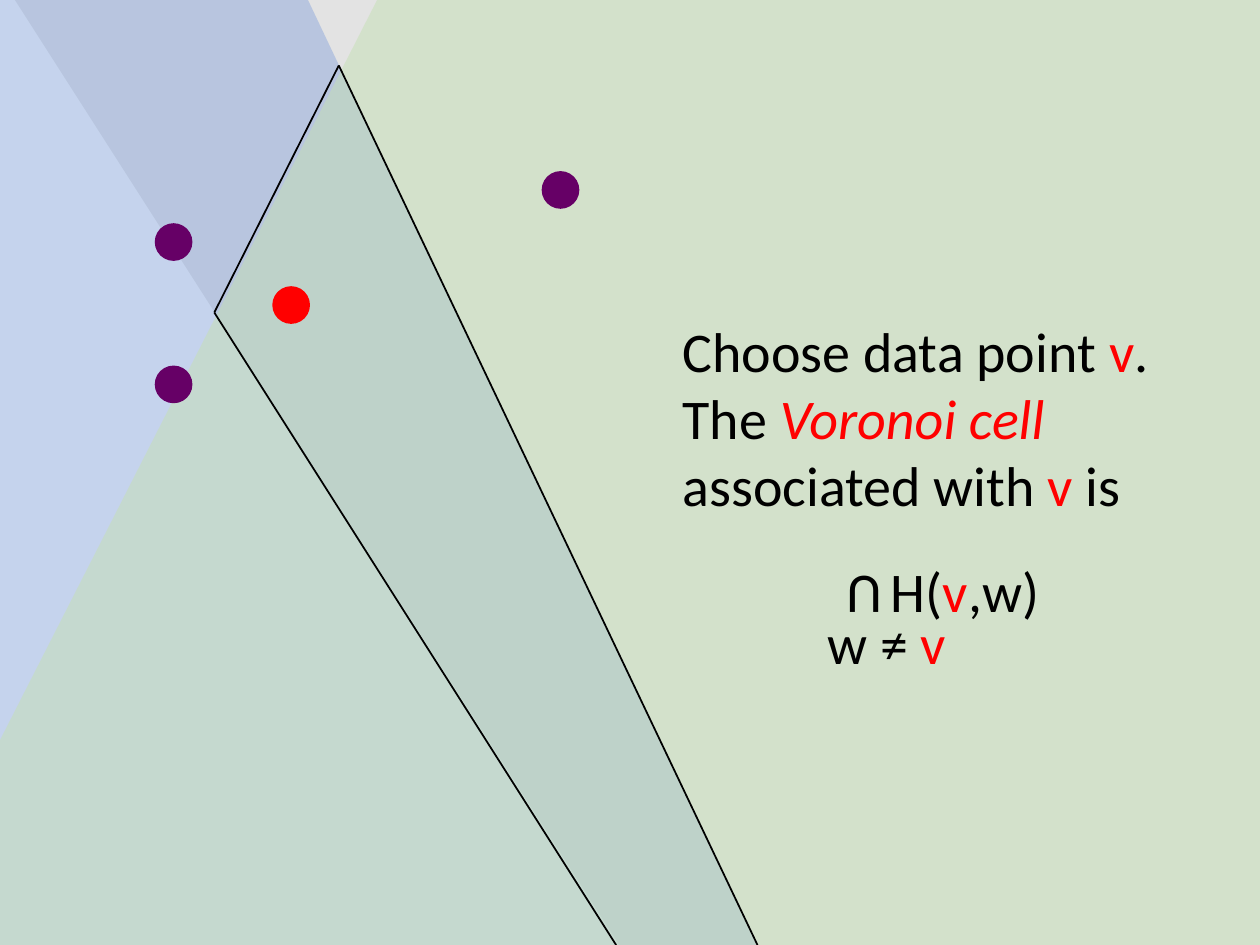
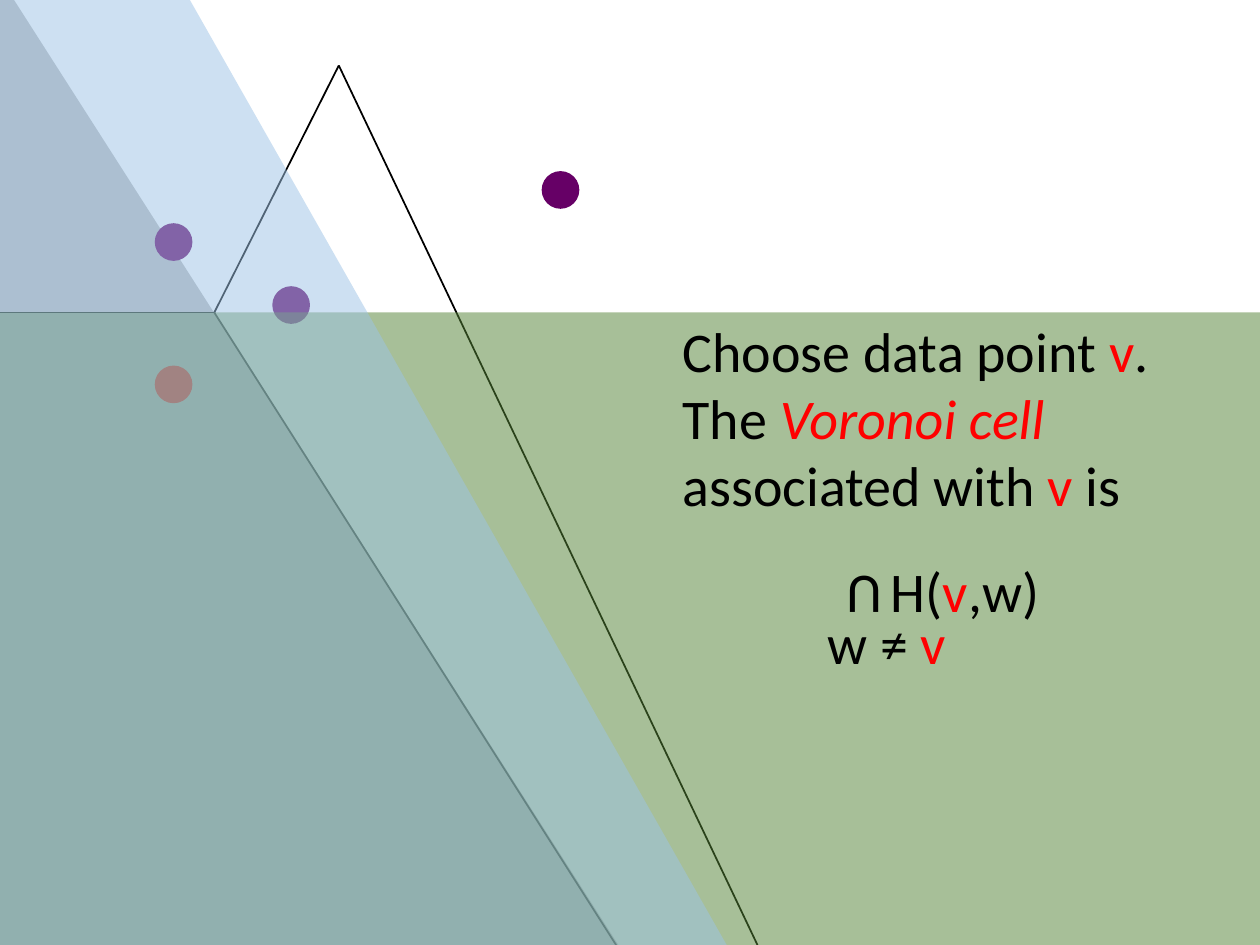
from dataclasses import dataclass
from itertools import pairwise

from lxml.etree import SubElement
from pptx import Presentation
from pptx.dml.color import RGBColor as Rgb
from pptx.enum.shapes import MSO_CONNECTOR as Connector, MSO_SHAPE as Shape
from pptx.enum.text import PP_ALIGN as Align
from pptx.oxml.ns import qn
from pptx.util import Cm, Pt


@dataclass(frozen=True)
class Theme:
    font: str = "Calibri"
    size: int = 32
    formula_gap: int = 22
    line_width: float = 1
    plane_alpha: int = 51
    ink: str = "000000"
    chosen: str = "FF0000"
    other: str = "660066"
    silver: str = "C9C9C9"
    periwinkle: str = "8FAADC"
    pale_green: str = "C5E0B4"
    slate: str = "7C7C7C"
    green: str = "548235"
    sky: str = "9DC3E6"


@dataclass(frozen=True)
class Box:
    left: float
    top: float
    width: float
    height: float

    def inner(self, left, top, width, height):
        return Box(self.left + left, self.top + top, width, height)

    def lengths(self):
        return [Cm(value) for value in (self.left, self.top, self.width, self.height)]


THEME = Theme()
PAGE_BOX = Box(0, 0, 25.4, 19.05)
TEXT_BOX = PAGE_BOX.inner(13.51, 4.88, 11.89, 9.25)
DOT_SIZE = 0.76
DOTS = {
    "lower": (3.12, 7.37),
    "middle": (5.49, 5.77),
    "upper": (3.12, 4.5),
    "right": (10.92, 3.45),
}
CORNER = (4.32, 6.3)
CELL_EDGES = [(12.42, 19.05), CORNER, (6.83, 1.32), (15.27, 19.05)]

PLAIN = {"color": THEME.ink, "italic": False}
MARKED = {"color": THEME.chosen, "italic": False}
TERM = {"color": THEME.chosen, "italic": True}
V = ("v", MARKED)


def add_filled(page, kind, box, color):
    shape = page.shapes.add_shape(kind, *box.lengths())
    shape.shadow.inherit = False
    shape.fill.solid()
    shape.fill.fore_color.rgb = Rgb.from_string(color)
    shape.line.fill.background()
    return shape


def draw_half_plane(page, box, place, angle, color):
    plane = add_filled(page, Shape.RECTANGLE, box.inner(*place), color)
    plane.rotation = angle
    tint = plane._element.spPr.find(qn("a:solidFill")).find(qn("a:srgbClr"))
    SubElement(tint, qn("a:alpha"), val=str(THEME.plane_alpha * 1000))


def draw_half_planes(page, box, planes):
    for plane in planes:
        draw_half_plane(page, box, *plane)


def draw_dots(page, box, chosen):
    for name, (left, top) in DOTS.items():
        color = THEME.chosen if name == chosen else THEME.other
        add_filled(page, Shape.OVAL, box.inner(left, top, DOT_SIZE, DOT_SIZE), color)


def draw_edge(page, box, start, end):
    ends = [Cm(origin + value) for point in (start, end)
            for origin, value in zip((box.left, box.top), point)]
    edge = page.shapes.add_connector(Connector.STRAIGHT, *ends)
    edge.line.color.rgb = Rgb.from_string(THEME.ink)
    edge.line.width = Pt(THEME.line_width)
    SubElement(edge._element.spPr, qn("a:effectLst"))


def draw_cell(page, box):
    for start, end in pairwise(CELL_EDGES):
        draw_edge(page, box, start, end)


def write_text(page, box, paragraphs, **frame_format):
    label = page.shapes.add_textbox(*box.lengths())
    frame = label.text_frame
    for name, value in {"word_wrap": True, **frame_format}.items():
        setattr(frame, name, value)
    for index, (spans, para_format) in enumerate(paragraphs):
        para = frame.add_paragraph() if index else frame.paragraphs[0]
        for name, value in para_format.items():
            setattr(para, name, value)
        for text, style in spans:
            span = para.add_run()
            span.text = text
            font_format = {"name": THEME.font, "size": Pt(THEME.size), "italic": style["italic"]}
            for name, value in font_format.items():
                setattr(span.font, name, value)
            span.font.color.rgb = Rgb.from_string(style["color"])
    return label


def write_definition(page, box, condition_width):
    formula_format = {"alignment": Align.CENTER, "space_before": Pt(THEME.formula_gap)}
    write_text(page, box, [
        ([("Choose data point ", PLAIN), V, (".", PLAIN)], {}),
        ([("The ", PLAIN), ("Voronoi cell ", TERM), ("associated with ", PLAIN), V, (" is", PLAIN)], {}),
        ([("H(", PLAIN), V, (",w)", PLAIN)], formula_format),
    ], margin_top=Cm(1.5))
    intersection = write_text(page, box.inner(3.66, 6.37, 0.86, 1.63), [([("U", PLAIN)], {})])
    intersection.rotation = 180
    condition = [("w ≠ ", PLAIN), V]
    write_text(page, box.inner(2.92, 7.26, condition_width, 1.63), [(condition, {})])


def build_middle_cell(page, box):
    draw_half_planes(page, box, [
        ((2.18, -5.26, 33.35, 24), 57.4, THEME.silver),
        ((-9.6, 4.09, 25.78, 15.37), 64.6, THEME.periwinkle),
        ((0.1, -0.64, 30.91, 24.89), 297, THEME.pale_green),
    ])
    draw_dots(page, box, "middle")
    draw_cell(page, box)
    write_definition(page, TEXT_BOX, 4.09)


def build_lower_cell(page, box):
    draw_half_plane(page, box, (-10.72, 7.16, 25.07, 11.13), 57.4, THEME.slate)
    draw_dots(page, box, "lower")
    draw_cell(page, box)
    draw_edge(page, box, CORNER, (-0.3, 6.3))
    draw_half_planes(page, box, [
        ((-0.3, 6.3, 25.78, 12.83), 0, THEME.green),
        ((-9.6, 6.12, 26.34, 12.83), 60.4, THEME.sky),
    ])
    write_definition(page, TEXT_BOX, 4.62)


def main():
    deck = Presentation()
    deck.slide_width = Cm(PAGE_BOX.width)
    deck.slide_height = Cm(PAGE_BOX.height)
    for build in (build_middle_cell, build_lower_cell):
        build(deck.slides.add_slide(deck.slide_layouts[6]), PAGE_BOX)
    deck.save("out.pptx")


if __name__ == "__main__":
    main()
